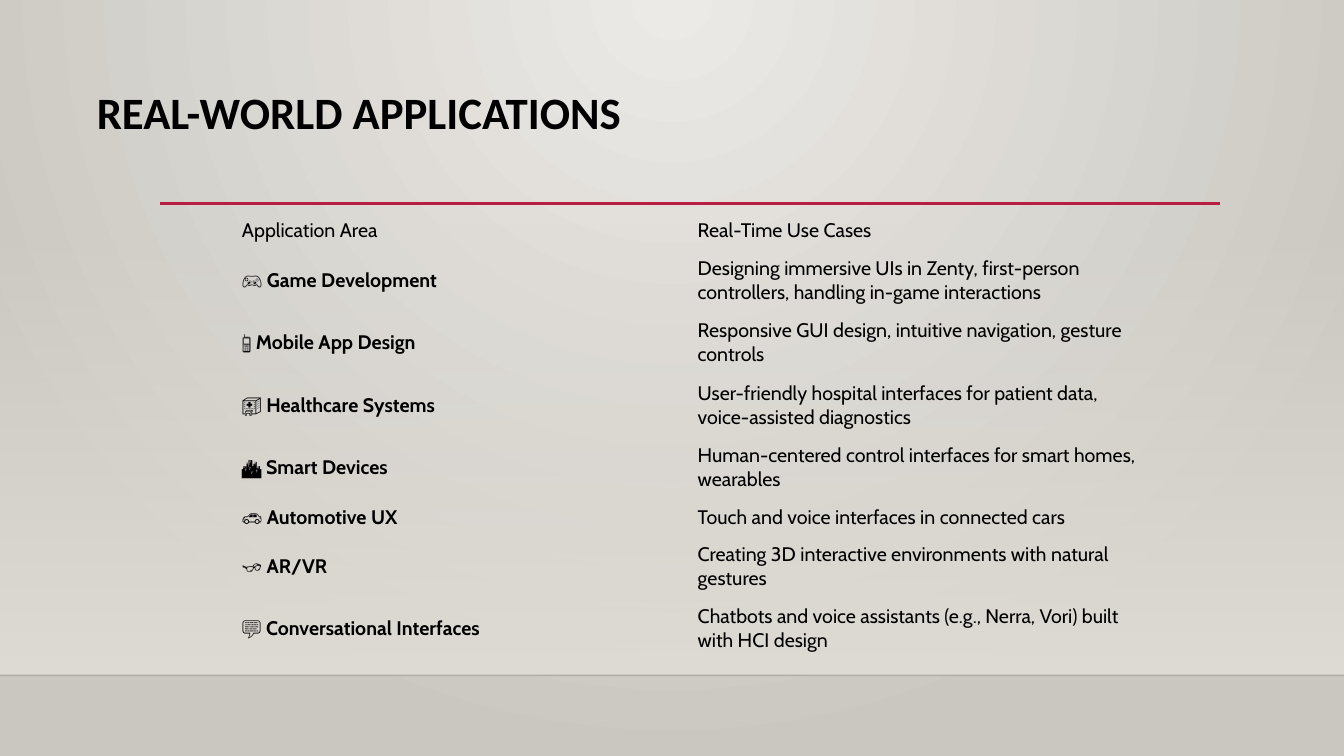
from dataclasses import dataclass

from lxml.etree import SubElement
from pptx import Presentation
from pptx.dml.color import RGBColor
from pptx.enum.shapes import MSO_CONNECTOR, MSO_SHAPE
from pptx.enum.text import MSO_ANCHOR as Anchor, MSO_AUTO_SIZE as AutoSize, PP_ALIGN as Align
from pptx.oxml.ns import qn
from pptx.util import Inches, Pt

COLORS = {
    "text": "000000",
    "accent": "B71E42",
    "floor_line": "000001",
    "glow": "ECEAE7",
    "edge": "CAC7C1",
    "wall": "DFDBD5",
}
NO_STYLE_NO_GRID = "{2D5ABB26-0587-4C30-8999-92F81FD0307C}"
SLIDE_WIDTH, SLIDE_HEIGHT = 13.33, 7.5
FLOOR_TOP = 6.7
SINGLE_LINE, DOUBLE_LINE = 0.36, 0.62


@dataclass(frozen=True)
class Application:
    icon: str
    area: str
    use_cases: str
    row_height: float = DOUBLE_LINE


@dataclass(frozen=True)
class Rule:
    left: float
    right: float
    top: float
    color: str
    width: float
    opacity: int = 100


APPLICATIONS = [
    Application("🎮", "Game Development", "Designing immersive UIs in Zenty, first-person "
                "controllers, handling in-game interactions"),
    Application("📱", "Mobile App Design",
                "Responsive GUI design, intuitive navigation, gesture controls"),
    Application("🏥", "Healthcare Systems",
                "User-friendly hospital interfaces for patient data, voice-assisted diagnostics"),
    Application("🏙️", "Smart Devices",
                "Human-centered control interfaces for smart homes, wearables"),
    Application("🚗", "Automotive UX",
                "Touch and voice interfaces in connected cars", SINGLE_LINE),
    Application("👓", "AR/VR", "Creating 3D interactive environments with natural gestures"),
    Application("💬", "Conversational Interfaces",
                "Chatbots and voice assistants (e.g., Nerra, Vori) built with HCI design"),
]
RULES = [
    Rule(0, SLIDE_WIDTH, FLOOR_TOP, "floor_line", 1, opacity=20),
    Rule(1.59, 12.1, 2.02, "accent", 2.5),
]


def rgb(name: str) -> RGBColor:
    return RGBColor.from_string(COLORS[name])


def set_opacity(element, percent: int) -> None:
    """Make the first RGB colour found inside the element translucent."""
    color = next(element.iter(qn("a:srgbClr")))
    SubElement(color, qn("a:alpha"), val=str(percent * 1000))


def add_text(paragraph, text: str, *, size: float = 14, font: str = "Cabin",
             bold: bool = False, color: str = "text") -> None:
    run = paragraph.add_run()
    run.text = text
    run.font.size = Pt(size)
    run.font.name = font
    run.font.bold = bold
    run.font.color.rgb = rgb(color)


def set_gradient(fill, start: str, end: str) -> None:
    fill.gradient()
    for stop, color, position in zip(fill.gradient_stops, (start, end), (0, 1)):
        stop.color.rgb = rgb(color)
        stop.position = position


def paint_background(slide) -> None:
    """Spread a circular glow from the middle of the top edge."""
    set_gradient(slide.background.fill, "glow", "edge")
    gradient = next(slide.element.iter(qn("a:gradFill")))
    gradient.remove(gradient.find(qn("a:lin")))
    circle = SubElement(gradient, qn("a:path"), path="circle")
    SubElement(circle, qn("a:fillToRect"), l="43000", t="0", r="43000", b="100000")


def add_wall(slide) -> None:
    top = 2.21
    wall = slide.shapes.add_shape(MSO_SHAPE.RECTANGLE, Inches(0), Inches(top),
                                  Inches(SLIDE_WIDTH), Inches(FLOOR_TOP - top))
    wall.shadow.inherit = False
    wall.line.fill.background()
    set_gradient(wall.fill, "wall", "wall")
    wall.fill.gradient_angle = 270
    set_opacity(wall.element.spPr, 0)


def add_rule(slide, rule: Rule) -> None:
    line = slide.shapes.add_connector(MSO_CONNECTOR.STRAIGHT, Inches(rule.left), Inches(rule.top),
                                      Inches(rule.right), Inches(rule.top))
    line.line.color.rgb = rgb(rule.color)
    line.line.width = Pt(rule.width)
    properties = line.element.spPr
    if rule.opacity < 100:
        set_opacity(properties, rule.opacity)
    SubElement(properties, qn("a:effectLst"))


def fill_title(slide) -> None:
    title = slide.shapes.title
    title.left, title.top = Inches(0.86), Inches(0.75)
    title.width, title.height = Inches(10.5), Inches(1.15)
    frame = title.text_frame
    frame.auto_size = AutoSize.NONE
    frame.vertical_anchor = Anchor.TOP
    paragraph = frame.paragraphs[0]
    paragraph.alignment = Align.LEFT
    paragraph.line_spacing = 1.07
    paragraph.space_after = Pt(8)
    add_text(paragraph, "REAL-WORLD APPLICATIONS", size=32, font="Calibri", bold=True)


def format_cell(cell) -> None:
    cell.fill.background()
    cell.vertical_anchor = Anchor.MIDDLE
    cell.margin_left = cell.margin_right = Inches(0.08)
    cell.margin_top = cell.margin_bottom = Inches(0.04)


def add_applications_table(slide) -> None:
    heights = [SINGLE_LINE] + [application.row_height for application in APPLICATIONS]
    frame = slide.shapes.add_table(len(heights), 2, Inches(2.32), Inches(2.11),
                                   Inches(9.04), Inches(sum(heights)))
    next(frame.element.iter(qn("a:tableStyleId"))).text = NO_STYLE_NO_GRID
    table = frame.table
    table.first_row = table.horz_banding = False
    for row, height in zip(table.rows, heights):
        row.height = Inches(height)
    for cell in table.iter_cells():
        format_cell(cell)

    for column, heading in enumerate(("Application Area", "Real-Time Use Cases")):
        add_text(table.cell(0, column).text_frame.paragraphs[0], heading)
    for row, application in enumerate(APPLICATIONS, start=1):
        area, use_cases = (table.cell(row, column).text_frame.paragraphs[0] for column in (0, 1))
        add_text(area, f"{application.icon} ")
        add_text(area, application.area, bold=True)
        add_text(use_cases, application.use_cases)


def main() -> None:
    presentation = Presentation()
    presentation.slide_width = Inches(SLIDE_WIDTH)
    presentation.slide_height = Inches(SLIDE_HEIGHT)
    slide = presentation.slides.add_slide(presentation.slide_layouts.get_by_name("Title Only"))
    paint_background(slide)
    add_wall(slide)
    for rule in RULES:
        add_rule(slide, rule)
    fill_title(slide)
    add_applications_table(slide)
    presentation.save("out.pptx")


if __name__ == "__main__":
    main()
